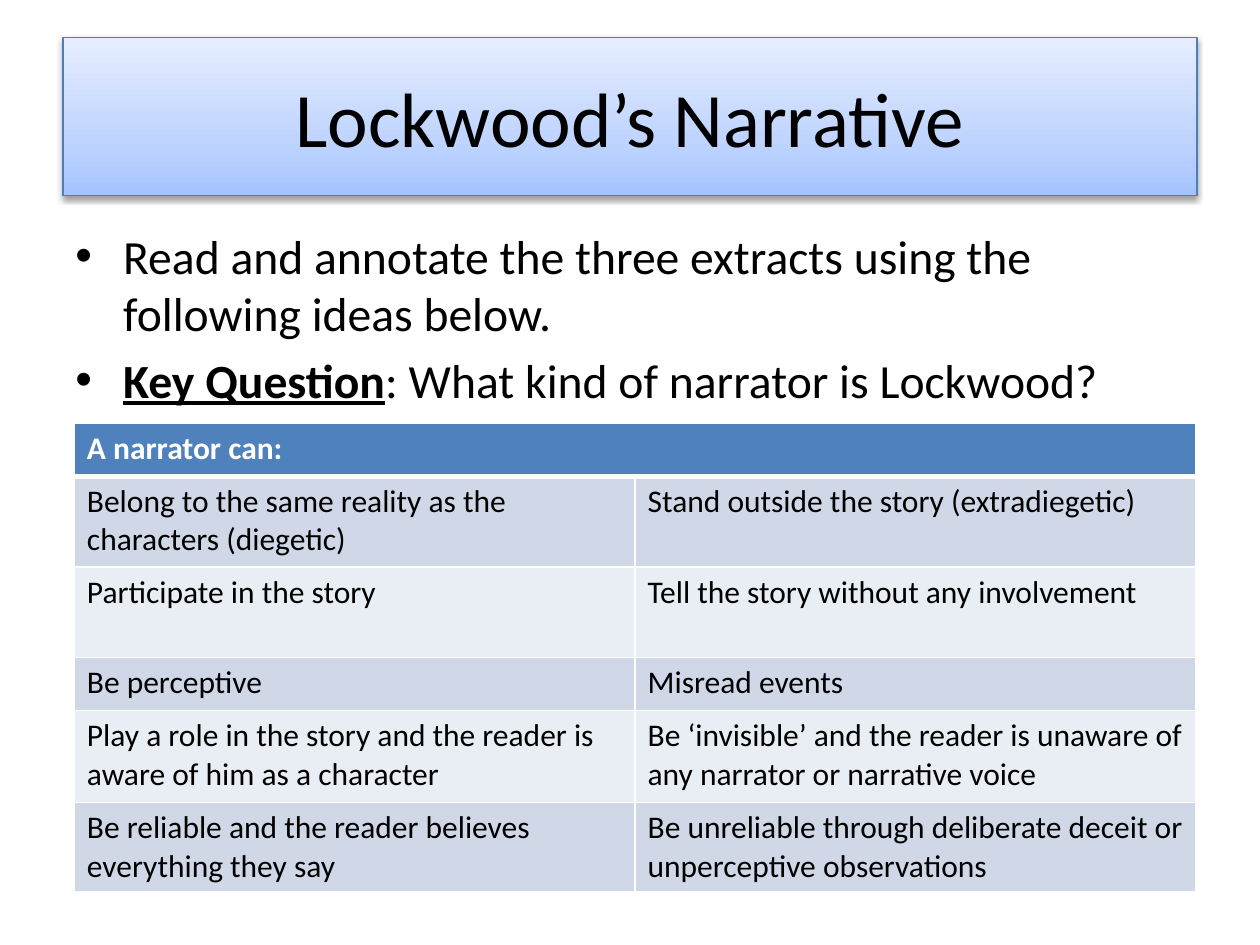
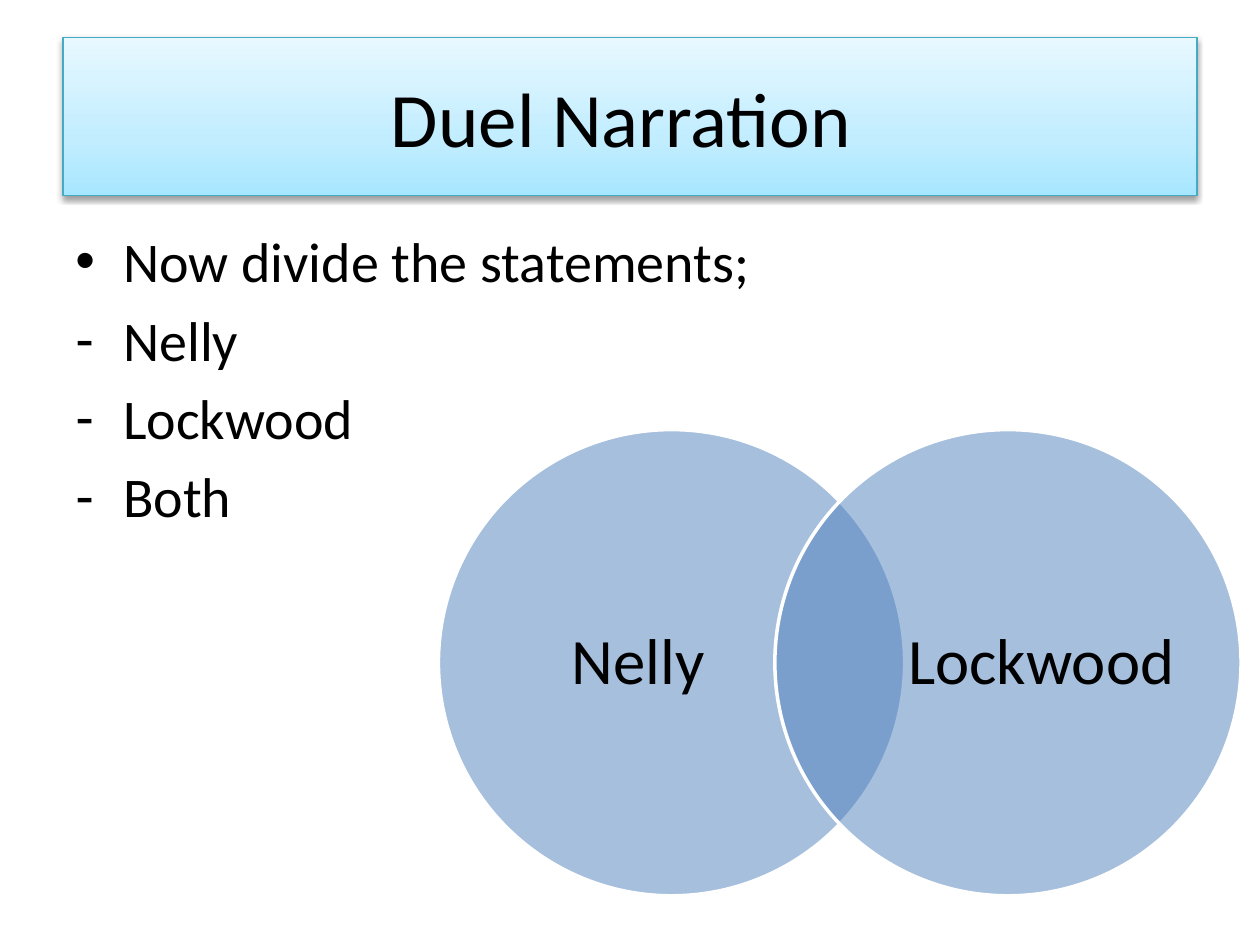
from dataclasses import dataclass

from lxml.etree import SubElement
from pptx import Presentation
from pptx.dml.color import RGBColor
from pptx.enum.shapes import MSO_SHAPE
from pptx.enum.text import MSO_ANCHOR, PP_ALIGN
from pptx.oxml.ns import qn
from pptx.util import Pt

PX = 9144  # 100 px to the inch


@dataclass(frozen=True)
class Theme:
    font: str = "Calibri"
    text: str = "000000"
    white: str = "FFFFFF"
    accent: str = "4F81BD"
    bands: tuple = ("D0D8E8", "E9EDF4")
    blue: tuple = ("A4C4FF", "BFD4FF", "E6EEFF")
    blue_line: str = "4B7EBC"
    aqua: tuple = ("A7E6FF", "C1EDFF", "E7F8FF")
    aqua_line: str = "46AAC5"
    title_size: float = 44
    venn_size: float = 37
    table_size: float = 18


THEME = Theme()


def add_node(parent, tag, **attributes):
    """Append a drawing element with the given attributes."""
    node = SubElement(parent, qn(tag))
    for name, value in attributes.items():
        node.set(name, str(value))
    return node


def write(frame, paragraphs, size, color=THEME.text, bold=False, align=PP_ALIGN.LEFT,
          anchor=MSO_ANCHOR.TOP, bullets="", before=0, line_spacing=None):
    """Write paragraphs; a pair is a bold underlined lead and its plain rest."""
    frame.word_wrap = True
    frame.vertical_anchor = anchor
    for index, content in enumerate(paragraphs):
        para = frame.paragraphs[0] if index == 0 else frame.add_paragraph()
        para.alignment = align
        para.space_before = Pt(before)
        para.line_spacing = line_spacing
        if bullets:
            properties = para._p.get_or_add_pPr()
            properties.set("marL", str(38 * PX))
            properties.set("indent", str(-38 * PX))
            add_node(properties, "a:buFont", typeface="Arial")
            add_node(properties, "a:buChar", char=bullets[index])
        pieces = (content,) if isinstance(content, str) else content
        for piece in pieces:
            lead = len(pieces) > 1 and piece == pieces[0]
            span = para.add_run()
            span.text = piece
            span.font.name = THEME.font
            span.font.size = Pt(size)
            span.font.bold = bold or lead
            span.font.underline = lead
            span.font.color.rgb = RGBColor.from_string(color)


deck = Presentation()
deck.slide_width = 1000 * PX
deck.slide_height = 750 * PX

# Title band and bullet list of each slide
slides = [
    ("Lockwood’s Narrative", THEME.blue, THEME.blue_line, 176, 27.2, "••",
     ["Read and annotate the three extracts using the following ideas below.",
      ("Key Question", ": What kind of narrator is Lockwood?")]),
    ("Duel Narration ", THEME.aqua, THEME.aqua_line, 495, 32, "•---",
     ["Now divide the statements;", "Nelly", "Lockwood", "Both"]),
]
pages = []
for title, gradient, line_color, body_height, body_size, bullets, body in slides:
    page = deck.slides.add_slide(deck.slide_layouts[6])
    pages.append(page)

    band = page.shapes.add_shape(MSO_SHAPE.RECTANGLE, 50 * PX, 30 * PX, 900 * PX, 125 * PX)
    band.fill.gradient()
    band.line.color.rgb = RGBColor.from_string(line_color)
    band.line.width = Pt(0.75)
    band.shadow.inherit = False
    properties = band._element.spPr
    fill = properties.find(qn("a:gradFill"))
    for child in list(fill):
        fill.remove(child)
    stops = add_node(fill, "a:gsLst")
    for position, color in zip((0, 35, 100), gradient):
        stop = add_node(stops, "a:gs", pos=position * 1000)
        add_node(stop, "a:srgbClr", val=color)
    add_node(fill, "a:lin", ang=270 * 60000, scaled=0)
    shadow = add_node(properties.find(qn("a:effectLst")), "a:outerShdw", blurRad=Pt(3.1),
                      dist=Pt(1.6), dir=90 * 60000, rotWithShape=0)
    shade = add_node(shadow, "a:srgbClr", val=THEME.text)
    add_node(shade, "a:alpha", val=38000)
    write(band.text_frame, [title], THEME.title_size, align=PP_ALIGN.CENTER,
          anchor=MSO_ANCHOR.MIDDLE)

    box = page.shapes.add_textbox(50 * PX, 175 * PX, 900 * PX, body_height * PX)
    write(box.text_frame, body, body_size, bullets=bullets, before=body_size * 0.2)

narrator_page, venn_page = pages

# Narrator table
rows = [
    ("A narrator can:", ""),
    ("Belong to the same reality as the characters (diegetic)",
     "Stand outside the story (extradiegetic)"),
    ("Participate in the story", "Tell the story without any involvement"),
    ("Be perceptive", "Misread events"),
    ("Play a role in the story and the reader is aware of him as a character",
     "Be ‘invisible’ and the reader is unaware of any narrator or narrative voice"),
    ("Be reliable and the reader believes everything they say",
     "Be unreliable through deliberate deceit or unperceptive observations"),
]
row_heights = (42, 72, 72, 42, 73, 71)
table = narrator_page.shapes.add_table(
    len(rows), 2, 59 * PX, 336 * PX, 890 * PX, sum(row_heights) * PX).table
for column in table.columns:
    column.width = 445 * PX
for row_index, (texts, height) in enumerate(zip(rows, row_heights)):
    header = row_index == 0
    table.rows[row_index].height = height * PX
    for column_index, text in enumerate(texts):
        cell = table.cell(row_index, column_index)
        properties = cell._tc.get_or_add_tcPr()
        for side in "LRTB":
            thick = (header and side == "B") or (row_index == 1 and side == "T")
            border = add_node(properties, f"a:ln{side}", w=Pt(3 if thick else 1))
            add_node(add_node(border, "a:solidFill"), "a:srgbClr", val=THEME.white)
        cell.fill.solid()
        cell.fill.fore_color.rgb = RGBColor.from_string(
            THEME.accent if header else THEME.bands[(row_index - 1) % 2])
        if text:
            write(cell.text_frame, [text], THEME.table_size, bold=header,
                  color=THEME.white if header else THEME.text)
table.cell(0, 0).merge(table.cell(0, 1))

# Venn diagram
venn = venn_page.shapes.add_group_shape()
for name, circle_left, label_left in (("Nelly", 348, 400), ("Lockwood", 615, 720)):
    circle = venn.shapes.add_shape(
        MSO_SHAPE.OVAL, circle_left * PX, 341 * PX, 370 * PX, 370 * PX)
    circle.shadow.inherit = False
    circle.fill.solid()
    circle.fill.fore_color.rgb = RGBColor.from_string(THEME.accent)
    tint = circle._element.spPr.find(qn("a:solidFill")).find(qn("a:srgbClr"))
    add_node(tint, "a:alpha", val=50000)
    circle.line.color.rgb = RGBColor.from_string(THEME.white)
    circle.line.width = Pt(2)

    label = venn.shapes.add_textbox(label_left * PX, 385 * PX, 213 * PX, 283 * PX)
    frame = label.text_frame
    frame.margin_left = frame.margin_right = frame.margin_top = frame.margin_bottom = 0
    write(frame, [name], THEME.venn_size, align=PP_ALIGN.CENTER,
          anchor=MSO_ANCHOR.MIDDLE, line_spacing=0.9)

deck.save("out.pptx")
